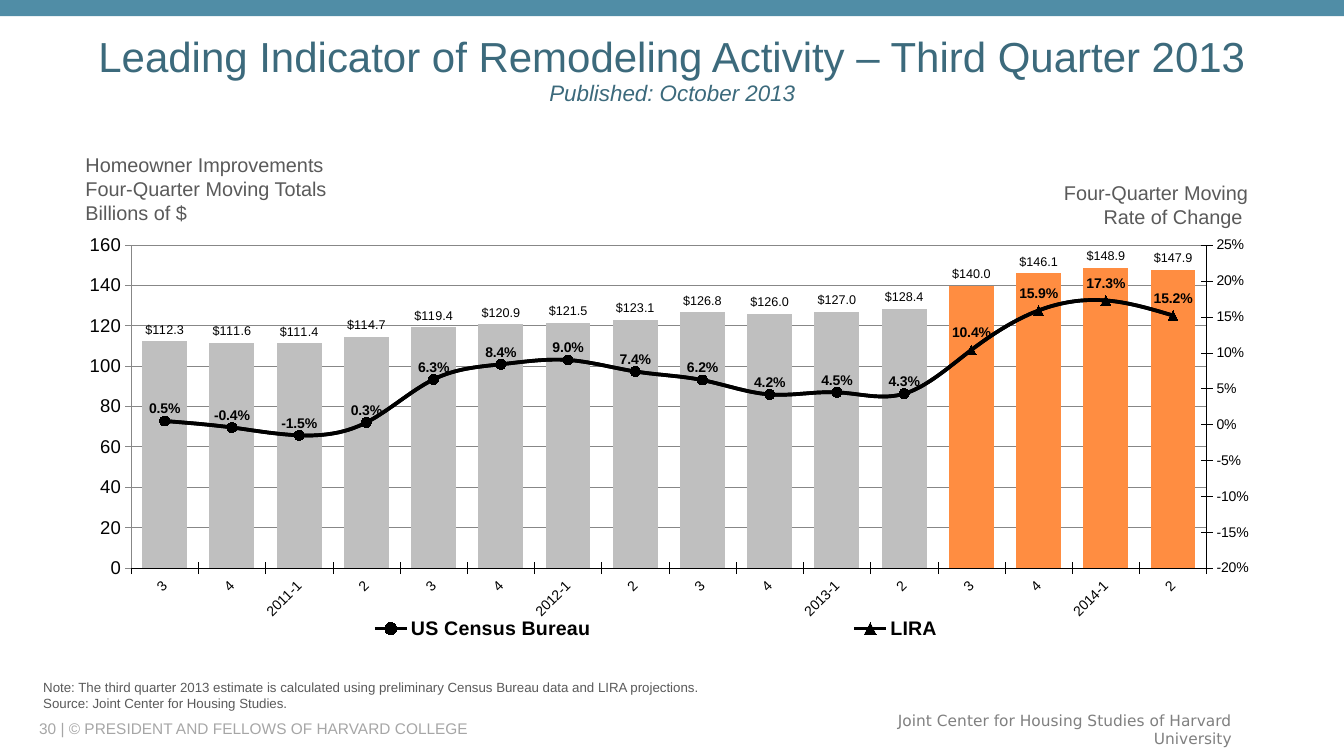
"""Build the slide on the remodeling activity indicator, third quarter 2013."""
from dataclasses import dataclass

from pptx import Presentation, oxml
from pptx import util as u
from pptx.chart import axis as ax
from pptx.chart import data as cd
from pptx.dml.color import RGBColor
from pptx.enum import chart as ce
from pptx.enum import shapes, text
from pptx.oxml import ns

BLACK = RGBColor(0x00, 0x00, 0x00)
BAND_BLUE = RGBColor(0x50, 0x8D, 0xA6)
TITLE_BLUE = RGBColor(0x3C, 0x6A, 0x7C)
TEXT_GRAY = RGBColor(0x5A, 0x5A, 0x5A)
FOOTER_GRAY = RGBColor(0xA6, 0xA6, 0xA6)
CENTER_GRAY = RGBColor(0x80, 0x80, 0x80)
ACTUAL_GRAY = RGBColor(0xBF, 0xBF, 0xBF)
PROJECTED_ORANGE = RGBColor(0xFF, 0x8D, 0x41)

QUARTERS = ["3", "4", "2011-1", "2", "3", "4", "2012-1", "2",
            "3", "4", "2013-1", "2", "3", "4", "2014-1", "2"]
SPENDING = [112.3, 111.6, 111.4, 114.7, 119.4, 120.9, 121.5, 123.1,
            126.8, 126.0, 127.0, 128.4, 140.0, 146.1, 148.9, 147.9]
CHANGE = [0.005, -0.004, -0.015, 0.003, 0.063, 0.084, 0.09, 0.074,
          0.062, 0.042, 0.045, 0.043, 0.104, 0.159, 0.173, 0.152]
FIRST_PROJECTED = 12
ACTUAL = range(FIRST_PROJECTED)
PROJECTED = range(FIRST_PROJECTED, len(QUARTERS))

RATE_AXES = """<c:plotArea {ns}>
<c:lineChart><c:grouping val="standard"/><c:varyColors val="0"/>
<c:marker val="1"/><c:axId val="5001"/><c:axId val="5002"/></c:lineChart>
<c:catAx><c:axId val="5001"/><c:scaling><c:orientation val="minMax"/></c:scaling>
<c:delete val="1"/><c:axPos val="b"/><c:crossAx val="5002"/><c:crosses val="autoZero"/></c:catAx>
<c:valAx><c:axId val="5002"/><c:scaling><c:orientation val="minMax"/></c:scaling>
<c:delete val="0"/><c:axPos val="r"/><c:crossAx val="5001"/><c:crosses val="max"/></c:valAx>
</c:plotArea>"""


@dataclass
class Caption:
    """A text box; each line is a paragraph."""
    box: tuple[float, float, float, float]
    lines: list[str]
    size: float
    color: RGBColor
    font: str = "Arial"
    align: text.PP_ALIGN = text.PP_ALIGN.LEFT
    anchor: text.MSO_ANCHOR = text.MSO_ANCHOR.TOP


@dataclass
class RateLine:
    """A line of the chart, with the quarters whose markers stay hidden."""
    marker: ce.XL_MARKER_STYLE
    unmarked: range


CAPTIONS = [
    Caption((20.9, 513.4, 570.2, 14.4), ["30 | © PRESIDENT AND FELLOWS OF HARVARD COLLEGE"],
            11, FOOTER_GRAY, anchor=text.MSO_ANCHOR.MIDDLE),
    Caption((606.2, 510.5, 280.8, 20.9), ["Joint Center for Housing Studies of Harvard University"],
            11, CENTER_GRAY, "DejaVu Sans", text.PP_ALIGN.RIGHT, text.MSO_ANCHOR.MIDDLE),
    Caption((54, 105.8, 275.8, 59),
            ["Homeowner Improvements", "Four-Quarter Moving Totals", "Billions of $"],
            14.2, TEXT_GRAY),
    Caption((606.2, 125.3, 292.3, 41.8), ["Four-Quarter Moving", "Rate of Change "],
            14.2, TEXT_GRAY, align=text.PP_ALIGN.RIGHT),
    Caption((23.8, 481.7, 725, 30.2),
            ["Note: The third quarter 2013 estimate is calculated using preliminary "
             "Census Bureau data and LIRA projections.",
             "Source: Joint Center for Housing Studies."], 9.5, TEXT_GRAY),
]
RATE_LINES = [RateLine(ce.XL_MARKER_STYLE.CIRCLE, PROJECTED),
              RateLine(ce.XL_MARKER_STYLE.TRIANGLE, ACTUAL)]


def style_font(font, size: float, color: RGBColor, name: str = "Arial", bold: bool = False) -> None:
    font.size, font.name, font.bold = u.Pt(size), name, bold
    font.color.rgb = color


def add_frame(slide, box: tuple, anchor: text.MSO_ANCHOR):
    frame = slide.shapes.add_textbox(*map(u.Pt, box)).text_frame
    frame.word_wrap = True
    frame.vertical_anchor = anchor
    return frame


def add_caption(slide, caption: Caption) -> None:
    frame = add_frame(slide, caption.box, caption.anchor)
    for number, line in enumerate(caption.lines):
        paragraph = frame.add_paragraph() if number else frame.paragraphs[0]
        paragraph.alignment = caption.align
        run = paragraph.add_run()
        run.text = line
        style_font(run.font, caption.size, caption.color, caption.font)


def add_title(slide) -> None:
    frame = add_frame(slide, (40.3, 23.8, 879.8, 54), text.MSO_ANCHOR.MIDDLE)
    paragraph = frame.paragraphs[0]
    paragraph.alignment = text.PP_ALIGN.CENTER
    paragraph.line_spacing = 0.9
    heading = paragraph.add_run()
    heading.text = "Leading Indicator of Remodeling Activity – Third Quarter 2013"
    style_font(heading.font, 30, TITLE_BLUE)
    paragraph.add_line_break()
    published = paragraph.add_run()
    published.text = "Published: October 2013"
    style_font(published.font, 16, TITLE_BLUE)
    published.font.italic = True


def add_band(slide) -> None:
    band = slide.shapes.add_shape(shapes.MSO_SHAPE.RECTANGLE, 0, 0, u.Pt(960), u.Pt(11.5))
    band.shadow.inherit = False
    band.fill.solid()
    band.fill.fore_color.rgb = BAND_BLUE
    band.line.fill.background()


def chart_xml(markup: str):
    return oxml.parse_xml(markup.format(ns=ns.nsdecls("c")))


def layout_xml(x: float, y: float, w: float, h: float, target: str = ""):
    return chart_xml(
        f'<c:layout {{ns}}><c:manualLayout>{target}'
        '<c:xMode val="edge"/><c:yMode val="edge"/>'
        f'<c:x val="{x}"/><c:y val="{y}"/><c:w val="{w}"/><c:h val="{h}"/>'
        '</c:manualLayout></c:layout>')


def style_axis(axis) -> None:
    axis.has_major_gridlines = False
    axis.major_tick_mark = ce.XL_TICK_MARK.CROSS
    axis.minor_tick_mark = ce.XL_TICK_MARK.NONE
    axis.tick_label_position = ce.XL_TICK_LABEL_POSITION.LOW
    axis.format.line.color.rgb = BLACK
    axis.format.line.width = u.Pt(0.33)
    style_font(axis.tick_labels.font, 10, BLACK)


def scale_axis(axis, low: float, high: float, step: float, number_format: str) -> None:
    style_axis(axis)
    axis.tick_label_position = ce.XL_TICK_LABEL_POSITION.NEXT_TO_AXIS
    axis.minimum_scale, axis.maximum_scale, axis.major_unit = low, high, step
    axis.tick_labels.number_format = number_format
    axis.tick_labels.number_format_is_linked = False


def label_series(series, number_format: str, position, size: float, bold: bool) -> None:
    labels = series.data_labels
    labels.show_value = True
    labels.number_format = number_format
    labels.number_format_is_linked = False
    labels.position = position
    style_font(labels.font, size, BLACK, bold=bold)


def style_line(line) -> None:
    line.color.rgb = BLACK
    line.width = u.Pt(2.64)


def style_rate_line(series, rate_line: RateLine) -> None:
    series.smooth = True
    style_line(series.format.line)
    series.marker.style, series.marker.size = rate_line.marker, 7
    series.marker.format.fill.solid()
    series.marker.format.fill.fore_color.rgb = BLACK
    series.marker.format.line.color.rgb = BLACK
    for quarter in rate_line.unmarked:
        point = series.points[quarter]
        point.marker.style = ce.XL_MARKER_STYLE.NONE
        style_line(point.format.line)


def move_rates_to_right_axis(chart) -> ax.ValueAxis:
    bars = chart.plots[0]._element
    plot_area = bars.getparent()
    lines, hidden_axis, rate_axis = chart_xml(RATE_AXES)
    for series in bars.findall(ns.qn("c:ser"))[1:]:
        for flag in series.findall(ns.qn("c:invertIfNegative")):
            series.remove(flag)
        lines.find(ns.qn("c:marker")).addprevious(series)
    bars.addnext(lines)
    plot_area.findall(ns.qn("c:valAx"))[-1].addnext(hidden_axis)
    hidden_axis.addnext(rate_axis)
    for layout in plot_area.findall(ns.qn("c:layout")):
        plot_area.remove(layout)
    plot_area.insert(0, layout_xml(0.061, 0.062, 0.879, 0.754, '<c:layoutTarget val="inner"/>'))
    return ax.ValueAxis(rate_axis)


def add_legend(chart) -> None:
    chart.has_legend = True
    legend = chart.legend
    legend.position = ce.XL_LEGEND_POSITION.BOTTOM
    legend.include_in_layout = False
    style_font(legend.font, 14, BLACK, bold=True)
    element = legend._element
    for layout in element.findall(ns.qn("c:layout")):
        element.remove(layout)
    entry = chart_xml('<c:legendEntry {ns}><c:idx val="0"/><c:delete val="1"/></c:legendEntry>')
    element.find(ns.qn("c:legendPos")).addnext(entry)
    entry.addnext(layout_xml(0.05, 0.93, 0.88, 0.06))


def add_remodeling_chart(slide) -> None:
    figures = cd.CategoryChartData()
    figures.categories = QUARTERS
    figures.add_series("Series 1", SPENDING)
    figures.add_series("US Census Bureau", CHANGE)
    figures.add_series("LIRA", CHANGE)
    chart = slide.shapes.add_chart(ce.XL_CHART_TYPE.COLUMN_CLUSTERED,
                                   *map(u.Pt, (40.3, 156.2, 874.1, 306)), figures).chart
    chart.has_title = False
    style_font(chart.font, 13.2, BLACK)
    rate_axis = move_rates_to_right_axis(chart)
    style_axis(chart.category_axis)
    chart.category_axis._element.find(".//" + ns.qn("a:bodyPr")).set("rot", "-2700000")
    scale_axis(chart.value_axis, 100, 180, 10, "\\$#,##0")
    scale_axis(rate_axis, -0.2, 0.25, 0.05, "0%")

    bars, lines = chart.plots
    bars.gap_width = 50
    bars.vary_by_categories = False
    spending = bars.series[0]
    spending.format.fill.solid()
    spending.format.fill.fore_color.rgb = ACTUAL_GRAY
    for quarter in PROJECTED:
        fill = spending.points[quarter].format.fill
        fill.solid()
        fill.fore_color.rgb = PROJECTED_ORANGE
    label_series(spending, "\\$#,##0.0", ce.XL_LABEL_POSITION.OUTSIDE_END, 9, False)
    for series, rate_line in zip(lines.series, RATE_LINES):
        style_rate_line(series, rate_line)
    label_series(lines.series[1], "0.0%", ce.XL_LABEL_POSITION.ABOVE, 10, True)
    add_legend(chart)


def main() -> None:
    deck = Presentation()
    deck.slide_width, deck.slide_height = u.Pt(960), u.Pt(540)
    slide = deck.slides.add_slide(deck.slide_layouts[6])
    add_band(slide)
    add_title(slide)
    add_remodeling_chart(slide)
    for caption in CAPTIONS:
        add_caption(slide, caption)
    deck.save("out.pptx")


if __name__ == "__main__":
    main()
